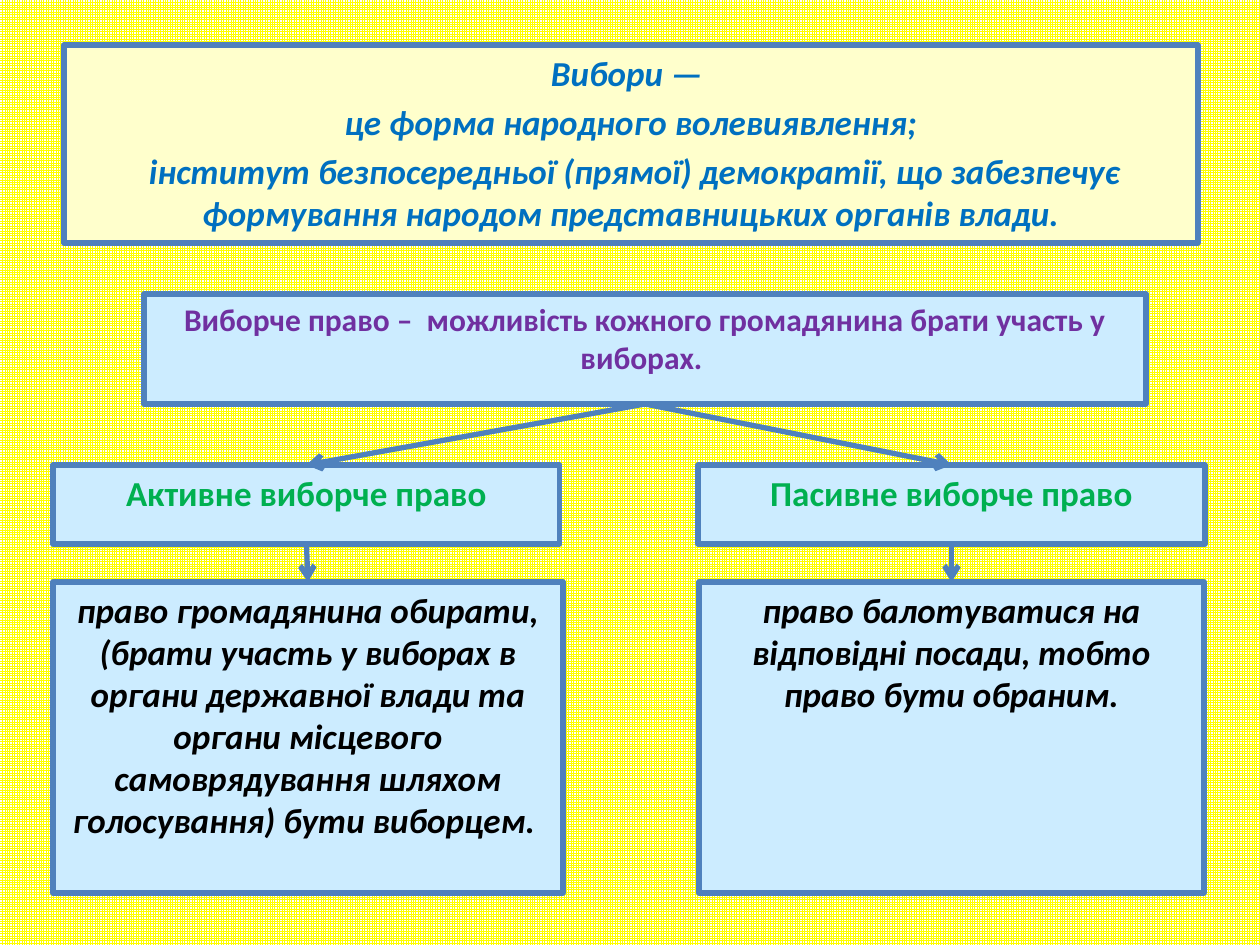
"""Builds a slide that defines elections and the two kinds of electoral right."""
from lxml import etree
from pptx import Presentation
from pptx import util as u
from pptx.dml.color import RGBColor
from pptx.enum import dml, shapes, text
from pptx.oxml.ns import qn

COLORS = {
    "grid": "FFFF00", "paper": "FFFFFF", "cream": "FFFFCC", "sky": "CCECFF",
    "border": "4F81BD", "blue": "0070C0", "purple": "7030A0",
    "green": "00B050", "black": "000000",
}
TOP, BOTTOM = 0, 2


def px(length):
    return u.Emu(round(length * 914400 / 126))


def color(name):
    return RGBColor.from_string(COLORS[name])


class Board:
    def __init__(self, slide, font="Calibri", line_width=3):
        self.slide = slide
        self.font = font
        self.line_width = u.Pt(line_width)

    def background(self, fore, back):
        fill = self.slide.background.fill
        fill.patterned()
        fill.pattern = dml.MSO_PATTERN.SMALL_GRID
        fill.fore_color.rgb = color(fore)
        fill.back_color.rgb = color(back)

    def outline(self, line):
        line.color.rgb = color("border")
        line.width = self.line_width

    def box(self, area, lines, ink, size=20, italic=False, fill="sky"):
        shape = self.slide.shapes.add_shape(
            shapes.MSO_SHAPE.RECTANGLE, *(px(length) for length in area))
        shape.shadow.inherit = False
        shape.fill.solid()
        shape.fill.fore_color.rgb = color(fill)
        self.outline(shape.line)
        frame = shape.text_frame
        frame.word_wrap = True
        frame.vertical_anchor = text.MSO_ANCHOR.TOP
        frame.text = "\n".join(lines)
        for paragraph in frame.paragraphs:
            paragraph.alignment = text.PP_ALIGN.CENTER
            paragraph.space_before = u.Pt(size * 0.2)
            font = paragraph.font
            font.name = self.font
            font.size = u.Pt(size)
            font.bold = True
            font.italic = italic
            font.color.rgb = color(ink)
        return shape

    def arrow(self, source, target):
        connector = self.slide.shapes.add_connector(
            shapes.MSO_CONNECTOR.STRAIGHT, 0, 0, 0, 0)
        connector.begin_connect(source, BOTTOM)
        connector.end_connect(target, TOP)
        self.outline(connector.line)
        etree.SubElement(connector.line._get_or_add_ln(), qn("a:tailEnd"), type="arrow")
        etree.SubElement(connector._element.spPr, qn("a:effectLst"))


def main():
    presentation = Presentation()
    presentation.slide_width, presentation.slide_height = px(1260), px(945)
    board = Board(presentation.slides.add_slide(presentation.slide_layouts[6]))
    board.background("grid", "paper")

    board.box((64, 45, 1134, 198), [
        "Вибори — ",
        "це форма народного волевиявлення;",
        " інститут безпосередньої (прямої) демократії, що забезпечує "
        "формування народом представницьких органів влади.",
    ], "blue", italic=True, fill="cream")
    right = board.box((144, 294, 1002, 110), [
        "Виборче право –  можливість кожного громадянина брати участь у виборах. ",
    ], "purple", size=18)

    branches = [
        (53, 53, 510, "Активне виборче право",
         "право громадянина обирати, (брати участь у виборах в органи "
         "державної влади та органи місцевого самоврядування шляхом "
         "голосування) бути виборцем. "),
        (698, 699, 505, "Пасивне виборче право",
         "право балотуватися на відповідні посади, тобто право бути обраним."),
    ]
    for heading_left, detail_left, detail_width, title, meaning in branches:
        heading = board.box((heading_left, 465, 507, 79), [title], "green")
        detail = board.box((detail_left, 582, detail_width, 311), [meaning],
                           "black", italic=True)
        board.arrow(right, heading)
        board.arrow(heading, detail)

    presentation.save("out.pptx")


if __name__ == "__main__":
    main()
